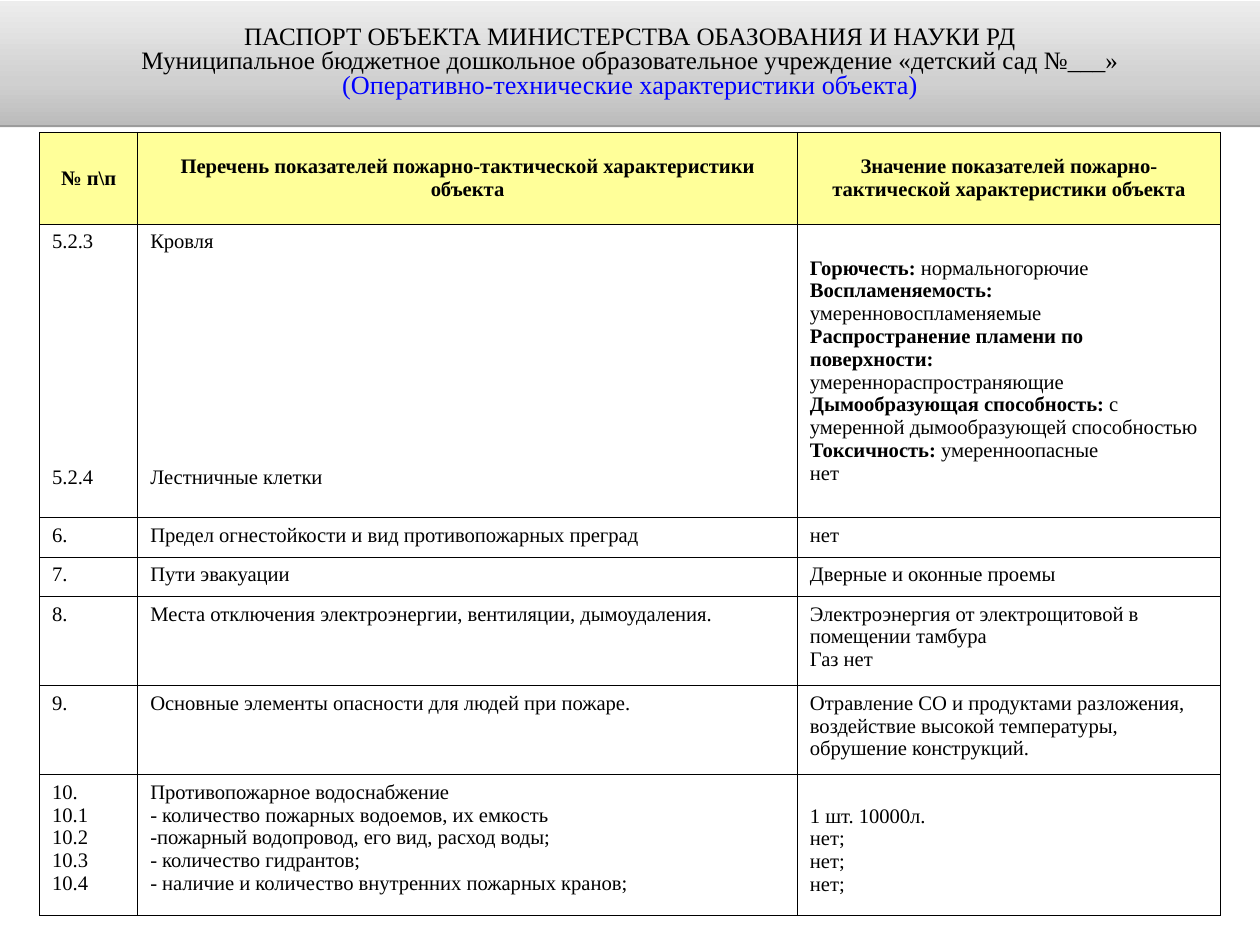
"""Build the fire-safety passport slide: a gradient title band above a table."""
from lxml import etree
from pptx import Presentation, util as u
from pptx.dml.color import RGBColor
from pptx.enum import text
from pptx.oxml import parse_xml
from pptx.oxml.ns import nsdecls, qn

BLACK = RGBColor(0, 0, 0)
BLUE = RGBColor(0, 0, 0xFF)
YELLOW = RGBColor(0xFF, 0xFF, 0x99)
WHITE = RGBColor(0xFF, 0xFF, 0xFF)
FONT = "Times New Roman"
LINE = 0.263
SKIPPED_LINES = 9
CENTER = text.PP_ALIGN.CENTER
MIDDLE = text.MSO_ANCHOR.MIDDLE

TITLE = [
    ("ПАСПОРТ ОБЪЕКТА МИНИСТЕРСТВА ОБАЗОВАНИЯ И НАУКИ РД", 20, BLACK),
    ("Муниципальное бюджетное дошкольное образовательное учреждение «детский сад №___»", 20, BLACK),
    ("(Оперативно-технические характеристики объекта)", 21, BLUE),
]
COLS = [1.09, 7.33, 4.7]
HEIGHTS = [1.02, 3.26, 0.44, 0.44, 0.99, 0.99, 1.56]
ROWS = [
    [["№ п\\п"],
     ["Перечень показателей пожарно-тактической характеристики объекта"],
     ["Значение показателей пожарно-тактической характеристики объекта"]],
    [["5.2.3", "5.2.4"],
     ["Кровля", "Лестничные клетки"],
     ["**Горючесть:** нормальногорючие",
      "**Воспламеняемость: **умеренновоспламеняемые",
      "**Распространение пламени по поверхности:**",
      "умереннораспространяющие",
      "**Дымообразующая способность: **с умеренной дымообразующей способностью",
      "**Токсичность:** умеренноопасные",
      "нет"]],
    [["6."], ["Предел огнестойкости и вид противопожарных преград"], ["нет"]],
    [["7."], ["Пути эвакуации"], ["Дверные и оконные проемы"]],
    [["8."], ["Места отключения электроэнергии, вентиляции, дымоудаления."],
     ["Электроэнергия от электрощитовой в помещении тамбура", "Газ нет"]],
    [["9."], ["Основные элементы опасности для людей при пожаре."],
     ["Отравление СО и продуктами разложения, воздействие высокой температуры, "
      "обрушение конструкций."]],
    [["10.", "10.1", "10.2", "10.3", "10.4"],
     ["Противопожарное водоснабжение",
      "• количество пожарных водоемов, их емкость",
      "•пожарный водопровод, его вид, расход воды;",
      "• количество гидрантов;",
      "• наличие и количество внутренних пожарных кранов;"],
     ["1 шт. 10000л.", "нет;", "нет;", "нет;"]],
]


def add_run(p, words, size, color, bold=False):
    r = p.add_run()
    r.text = words
    for name, value in {"name": FONT, "size": u.Pt(size), "bold": bold}.items():
        setattr(r.font, name, value)
    r.font.color.rgb = color


def set_attrs(obj, values):
    for name, value in values.items():
        setattr(obj, name, value)


prs = Presentation()
prs.slide_width, prs.slide_height = u.Inches(14), u.Inches(10.5)
s = prs.slides.add_slide(prs.slide_layouts[5])

sp = s.shapes.title
set_attrs(sp, {"left": 0, "top": u.Inches(0.01),
               "width": u.Inches(14), "height": u.Inches(1.38)})
stops = "".join(
    f'<a:gs pos="{pos * 1000}"><a:srgbClr val="{color}"/></a:gs>'
    for pos, color in [(0, "BCBCBC"), (35, "D0D0D0"), (100, "EDEDED")])
spPr = sp._element.spPr
spPr.append(parse_xml(
    f'<a:gradFill {nsdecls("a")} rotWithShape="1"><a:gsLst>{stops}</a:gsLst>'
    '<a:lin ang="16200000" scaled="0"/></a:gradFill>'))
spPr.append(parse_xml(
    f'<a:effectLst {nsdecls("a")}><a:outerShdw blurRad="0" dist="20320" dir="5400000" '
    'rotWithShape="0"><a:srgbClr val="000000"><a:alpha val="38000"/></a:srgbClr>'
    '</a:outerShdw></a:effectLst>'))
tf = sp.text_frame
set_attrs(tf, {"word_wrap": True, "auto_size": text.MSO_AUTO_SIZE.NONE,
               "vertical_anchor": MIDDLE,
               "margin_left": u.Inches(0.12), "margin_right": u.Inches(0.12),
               "margin_top": u.Inches(0.06), "margin_bottom": u.Inches(0.06)})
for i, (words, size, color) in enumerate(TITLE):
    p = tf.add_paragraph() if i else tf.paragraphs[0]
    set_attrs(p, {"alignment": CENTER, "line_spacing": 0.8})
    add_run(p, words, size, color)

table = s.shapes.add_table(len(ROWS), len(COLS), u.Inches(0.44), u.Inches(1.47),
                           u.Inches(sum(COLS)), u.Inches(sum(HEIGHTS))).table
set_attrs(table, {"first_row": False, "horz_banding": False})
for column, width in zip(table.columns, COLS):
    column.width = u.Inches(width)
for row, height in zip(table.rows, HEIGHTS):
    row.height = u.Inches(height)

for i, row in enumerate(ROWS):
    for j, lines in enumerate(row):
        cell = table.cell(i, j)
        header = i == 0
        top = 0.07 + LINE if (i, j) == (6, 2) else 0.07
        set_attrs(cell, {"margin_left": u.Inches(0.14), "margin_right": u.Inches(0.14),
                         "margin_top": u.Inches(top), "margin_bottom": u.Inches(0.07),
                         "vertical_anchor": MIDDLE if header or (i, j) == (1, 2)
                         else text.MSO_ANCHOR.TOP})
        cell.fill.solid()
        cell.fill.fore_color.rgb = YELLOW if header else WHITE
        tcPr = cell._tc.get_or_add_tcPr()
        for n, side in enumerate(["lnL", "lnR", "lnT", "lnB"]):
            tcPr.insert(n, parse_xml(
                f'<a:{side} {nsdecls("a")} w="12700"><a:solidFill>'
                f'<a:srgbClr val="{BLACK}"/></a:solidFill></a:{side}>'))
        for k, line in enumerate(lines):
            p = cell.text_frame.add_paragraph() if k else cell.text_frame.paragraphs[0]
            p.alignment = CENTER if header else text.PP_ALIGN.LEFT
            if i == 1 and j < 2 and k:
                p.space_before = u.Inches(SKIPPED_LINES * LINE)
            if line.startswith("•"):
                line = line[1:]
                pPr = p._p.get_or_add_pPr()
                set_attrs(pPr, {"marL": 0, "indent": 0})
                etree.SubElement(pPr, qn("a:buFont")).set("typeface", FONT)
                etree.SubElement(pPr, qn("a:buChar")).set("char", "-")
            for n, words in enumerate(line.split("**")):
                if words:
                    add_run(p, words, 16.5, BLACK, header or n % 2 == 1)

prs.save("out.pptx")
